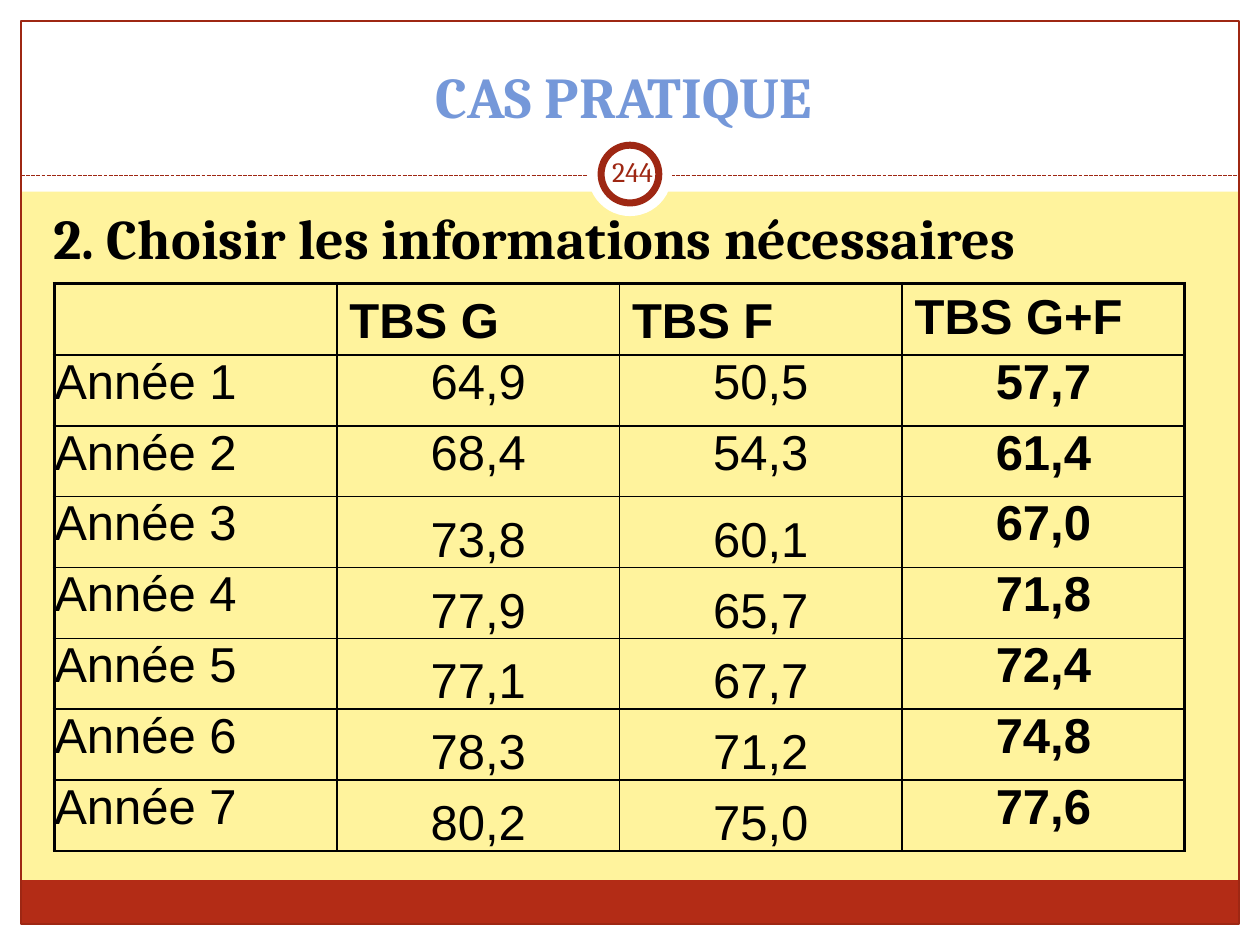
"""Builds the CAS PRATIQUE slide with its table of TBS by year."""
import pptx
import pptx.dml.color
import pptx.enum.dml
import pptx.enum.shapes
import pptx.enum.text
import pptx.oxml
import pptx.oxml.ns
import pptx.util

Pt = pptx.util.Pt
RGB = pptx.dml.color.RGBColor
SHAPE = pptx.enum.shapes.MSO_SHAPE
ANCHOR = pptx.enum.text.MSO_ANCHOR
ALIGN = pptx.enum.text.PP_ALIGN

CREAM = RGB(0xFF, 0xF3, 0x9D)
WHITE = RGB(0xFF, 0xFF, 0xFF)
BLACK = RGB(0, 0, 0)
RED = RGB(0xB3, 0x2C, 0x16)
DARK_RED = RGB(0x9E, 0x27, 0x13)
BLUE = RGB(0x75, 0x98, 0xD9)

ROWS = [
    ("", "TBS G", "TBS F", "TBS G+F"),
    ("Année 1", "64,9", "50,5", "57,7"),
    ("Année 2", "68,4", "54,3", "61,4"),
    ("Année 3", "73,8", "60,1", "67,0"),
    ("Année 4", "77,9", "65,7", "71,8"),
    ("Année 5", "77,1", "67,7", "72,4"),
    ("Année 6", "78,3", "71,2", "74,8"),
    ("Année 7", "80,2", "75,0", "77,6"),
]


def write(tf, text, font="Cambria", size=16, color=BLACK, bold=False, align=ALIGN.LEFT):
    p = tf.paragraphs[0]
    p.alignment = align
    r = p.add_run()
    r.text = text
    r.font.name, r.font.size, r.font.bold = font, Pt(size), bold
    r.font.color.rgb = color


def set_margins(target, left, top, right, bottom):
    target.margin_left, target.margin_top = Pt(left), Pt(top)
    target.margin_right, target.margin_bottom = Pt(right), Pt(bottom)


def set_borders(cell, **widths):
    tcPr = cell._tc.get_or_add_tcPr()
    for i, side in enumerate("LRTB"):
        ln = pptx.oxml.parse_xml(
            f'<a:ln{side} {pptx.oxml.ns.nsdecls("a")} w="{Pt(widths[side])}">'
            f'<a:solidFill><a:srgbClr val="{BLACK}"/></a:solidFill></a:ln{side}>')
        tcPr.insert(i, ln)


class Builder:
    def __init__(self, s):
        self.s = s

    def background(self, color):
        fill = self.s.background.fill
        fill.solid()
        fill.fore_color.rgb = color

    def shape(self, kind, x, y, w, h, fill=None, line=None, width=0.75):
        sp = self.s.shapes.add_shape(kind, Pt(x), Pt(y), Pt(w), Pt(h))
        sp.shadow.inherit = False
        for part, color in ((sp.fill, fill), (sp.line.fill, line)):
            if color is None:
                part.background()
            else:
                part.solid()
                part.fore_color.rgb = color
        if line is not None:
            sp.line.width = Pt(width)

    def dashed_line(self, x1, y1, x2, y2):
        cx = self.s.shapes.add_connector(
            pptx.enum.shapes.MSO_CONNECTOR.STRAIGHT, Pt(x1), Pt(y1), Pt(x2), Pt(y2))
        cx.line.color.rgb = DARK_RED
        cx.line.width = Pt(0.75)
        cx.line.dash_style = pptx.enum.dml.MSO_LINE.SQUARE_DOT
        spPr = cx._element.spPr
        spPr.append(pptx.oxml.parse_xml(f'<a:effectLst {pptx.oxml.ns.nsdecls("a")}/>'))

    def title(self, text, x, y, w, h):
        sp = self.s.shapes.title
        sp.left, sp.top, sp.width, sp.height = Pt(x), Pt(y), Pt(w), Pt(h)
        sp.element.getparent().append(sp.element)
        sp.text_frame.vertical_anchor = ANCHOR.BOTTOM
        write(sp.text_frame, text, size=33, color=BLUE, bold=True, align=ALIGN.CENTER)

    def text(self, text, x, y, w, h, margins, anchor=ANCHOR.TOP, **style):
        tf = self.s.shapes.add_textbox(Pt(x), Pt(y), Pt(w), Pt(h)).text_frame
        tf.word_wrap = True
        tf.vertical_anchor = anchor
        set_margins(tf, *margins)
        write(tf, text, **style)

    def table(self, rows, x, y, w, h):
        last = len(rows[0]) - 1
        table = self.s.shapes.add_table(
            len(rows), last + 1, Pt(x), Pt(y), Pt(w), Pt(h)).table
        table.first_row = table.horz_banding = False
        for i, row in enumerate(rows):
            for j, text in enumerate(row):
                cell = table.cell(i, j)
                cell.fill.background()
                header, middle = i == 0, 0 < j < last
                set_margins(cell, *((7.2, 3.6, 7.2, 3.6) if header else (0, 0, 0, 0)))
                low = middle and i not in (1, 2)
                cell.vertical_anchor = ANCHOR.BOTTOM if low else ANCHOR.TOP
                set_borders(cell, L=2.25 if j == 0 else 1, R=2.25 if j == last else 1,
                            T=2.25 if header else 1, B=1)
                if text:
                    write(cell.text_frame, text, font="Arial", size=28,
                          bold=header or j == last,
                          align=ALIGN.LEFT if header or j == 0 else ALIGN.CENTER)


def main():
    prs = pptx.Presentation()
    prs.slide_width, prs.slide_height = Pt(720), Pt(540)
    b = Builder(prs.slides.add_slide(prs.slide_layouts[5]))
    b.background(CREAM)
    for box in ((0, 528, 720, 12), (0, 0, 720, 109.5), (0, 0, 12, 540), (708, 0, 12, 540)):
        b.shape(SHAPE.RECTANGLE, *box, fill=WHITE)
    b.shape(SHAPE.RECTANGLE, 12, 503, 696, 25, fill=RED)
    b.shape(SHAPE.RECTANGLE, 12, 12, 696, 516, line=DARK_RED)
    b.dashed_line(12, 100.5, 708, 100.5)
    b.shape(SHAPE.OVAL, 336, 75.5, 48, 48, fill=WHITE)
    b.shape(SHAPE.OVAL, 343.5, 83, 33, 33, fill=WHITE, line=DARK_RED, width=4)
    b.title("CAS PRATIQUE ", 24, 18, 672, 60)
    b.text("2. Choisir les informations nécessaires", 16.5, 112.5, 703.5, 404.5,
           (14, 3.6, 7.2, 3.6), size=32, bold=True)
    b.table(ROWS, 31, 162, 646, 324)
    b.text("244", 343.5, 80.5, 36, 34.5, (3.6, 3.6, 3.6, 3.6), ANCHOR.MIDDLE,
           color=DARK_RED, align=ALIGN.CENTER)
    prs.save("out.pptx")


if __name__ == "__main__":
    main()
